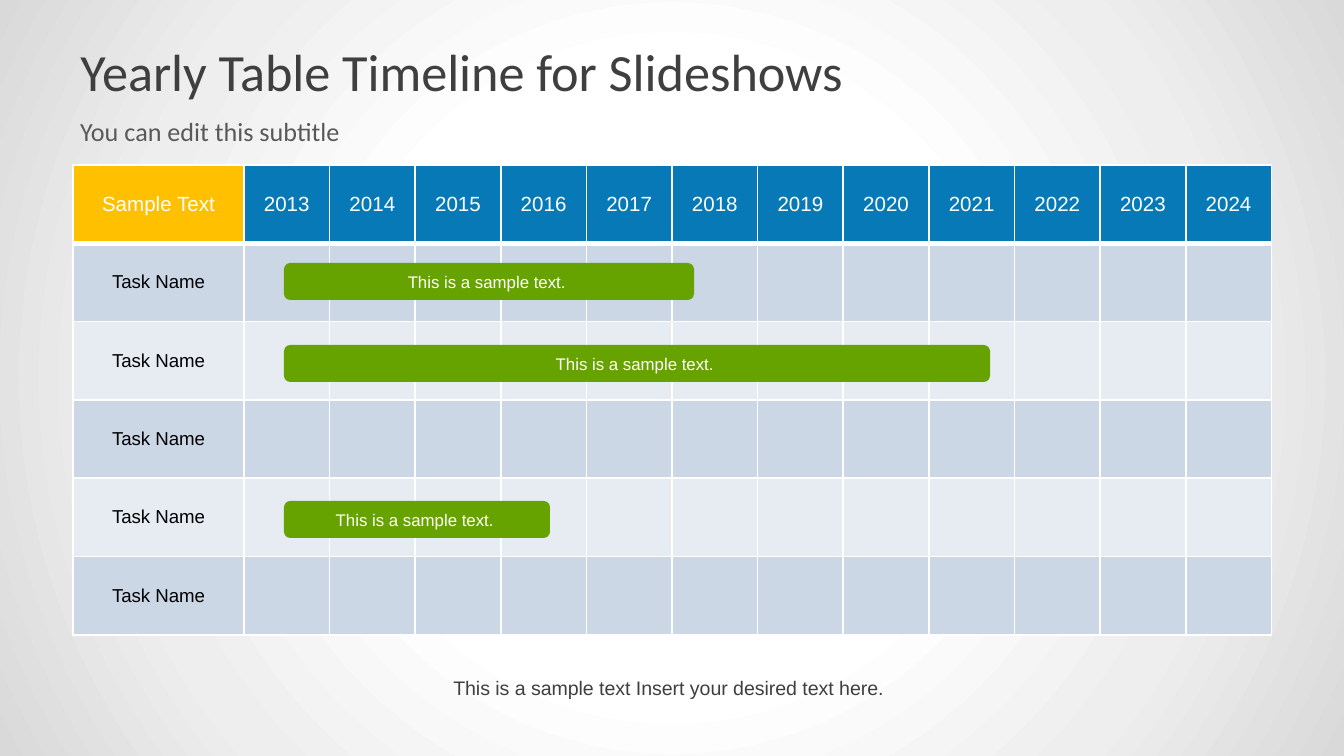
from pptx import Presentation
from pptx.dml.color import RGBColor
from pptx.enum.shapes import MSO_SHAPE as Shape
from pptx.enum.text import MSO_ANCHOR as Anchor, MSO_AUTO_SIZE as AutoSize, PP_ALIGN as Align
from pptx.oxml import parse_xml
from pptx.oxml.ns import nsdecls
from pptx.util import Emu, Pt

EMU_PER_PX = 914400 / 134.4

WHITE = RGBColor(0xFF, 0xFF, 0xFF)
BLACK = RGBColor(0x00, 0x00, 0x00)
DARK = RGBColor(0x3F, 0x3F, 0x3F)
GREY = RGBColor(0x59, 0x59, 0x59)
YELLOW = RGBColor(0xFF, 0xC0, 0x00)
BLUE = RGBColor(0x07, 0x79, 0xB7)
GREEN = RGBColor(0x67, 0xA3, 0x00)
BAND_DARK = RGBColor(0xCC, 0xD7, 0xE6)
BAND_LIGHT = RGBColor(0xE7, 0xEC, 0xF3)
GLOW_MID = RGBColor(0xEE, 0xEE, 0xEE)
GLOW_EDGE = RGBColor(0xD9, 0xD9, 0xD9)

GLOW_STOPS = [(41, WHITE), (72, GLOW_MID), (100, GLOW_EDGE)]
YEARS = range(2013, 2025)
TASKS = ["Task Name"] * 5
BAR_TEXT = "This is a sample text. "
BAR_LEFT, BAR_HEIGHT = 284, 37
BARS = [(263, 410), (345, 706), (501, 266)]  # top, width


def px(value):
    return Emu(round(value * EMU_PER_PX))


def box(left, top, width, height):
    return px(left), px(top), px(width), px(height)


def write(frame, text, size, color, font="Arial", align=Align.CENTER):
    paragraph = frame.paragraphs[0]
    paragraph.alignment = align
    run = paragraph.add_run()
    run.text = text
    run.font.name = font
    run.font.size = Pt(size)
    run.font.color.rgb = color


def set_background(slide):
    stops = "".join(
        f'<a:gs pos="{pos * 1000}"><a:srgbClr val="{color}"/></a:gs>'
        for pos, color in GLOW_STOPS)
    slide.element.cSld.insert(0, parse_xml(
        f'<p:bg {nsdecls("p", "a")}><p:bgPr><a:gradFill rotWithShape="1">'
        f'<a:gsLst>{stops}</a:gsLst><a:path path="circle">'
        '<a:fillToRect l="50000" t="50000" r="50000" b="50000"/></a:path>'
        '</a:gradFill><a:effectLst/></p:bgPr></p:bg>'))


def add_title(slide, text):
    title = slide.shapes.title
    title.left, title.top, title.width, title.height = box(67, 31, 1210, 79)
    frame = title.text_frame
    frame.auto_size = AutoSize.NONE
    frame.vertical_anchor = Anchor.MIDDLE
    write(frame, text, 28, DARK, "Calibri", Align.LEFT)


def add_text(slide, place, text, size, color, **style):
    frame = slide.shapes.add_textbox(*place).text_frame
    frame.word_wrap = True
    write(frame, text, size, color, **style)


def style_cell(cell, fill, top=1, bottom=1):
    # Borders come before the fill in the cell properties
    properties = cell._tc.get_or_add_tcPr()
    for side, width in (("L", 1), ("R", 1), ("T", top), ("B", bottom)):
        properties.append(parse_xml(
            f'<a:ln{side} {nsdecls("a")} w="{Pt(width)}"><a:solidFill>'
            f'<a:srgbClr val="{WHITE}"/></a:solidFill></a:ln{side}>'))
    cell.fill.solid()
    cell.fill.fore_color.rgb = fill
    cell.vertical_anchor = Anchor.MIDDLE


def add_timeline(slide):
    left, top, width, height = box(73, 165, 1199, 470)
    task_width = px(171)
    table = slide.shapes.add_table(
        len(TASKS) + 1, len(YEARS) + 1, left, top, width, height).table
    table.first_row = table.horz_banding = False
    for index, column in enumerate(table.columns):
        column.width = Emu((width - task_width) // len(YEARS)) if index else task_width

    # Header row
    for index, label in enumerate(["Sample Text", *YEARS]):
        cell = table.cell(0, index)
        style_cell(cell, BLUE if index else YELLOW, bottom=3)
        write(cell.text_frame, str(label), 11, WHITE)

    # Task rows in alternating bands
    for row, task in enumerate(TASKS, start=1):
        for column in range(len(YEARS) + 1):
            style_cell(table.cell(row, column),
                       BAND_DARK if row % 2 else BAND_LIGHT,
                       top=3 if row == 1 else 1)
        write(table.cell(row, 0).text_frame, task, 10, BLACK)


def add_bar(slide, top, width):
    bar = slide.shapes.add_shape(
        Shape.ROUNDED_RECTANGLE, *box(BAR_LEFT, top, width, BAR_HEIGHT))
    bar.shadow.inherit = False
    bar.fill.solid()
    bar.fill.fore_color.rgb = GREEN
    bar.line.fill.background()
    bar.text_frame.vertical_anchor = Anchor.MIDDLE
    write(bar.text_frame, BAR_TEXT, 9, WHITE)


def main():
    deck = Presentation()
    deck.slide_width, deck.slide_height = px(1344), px(756)
    slide = deck.slides.add_slide(deck.slide_layouts[5])
    set_background(slide)

    # Heading
    add_title(slide, "Yearly Table Timeline for Slideshows")
    add_text(slide, box(67, 109, 1210, 56), "You can edit this subtitle",
             14, GREY, font="Calibri", align=Align.LEFT)

    # Timeline with its task bars
    add_timeline(slide)
    for top, width in BARS:
        add_bar(slide, top, width)

    # Caption
    add_text(slide, box(347, 669, 649, 38),
             "This is a sample text Insert your desired text here. ", 10.5, DARK)

    deck.save("out.pptx")


if __name__ == "__main__":
    main()
